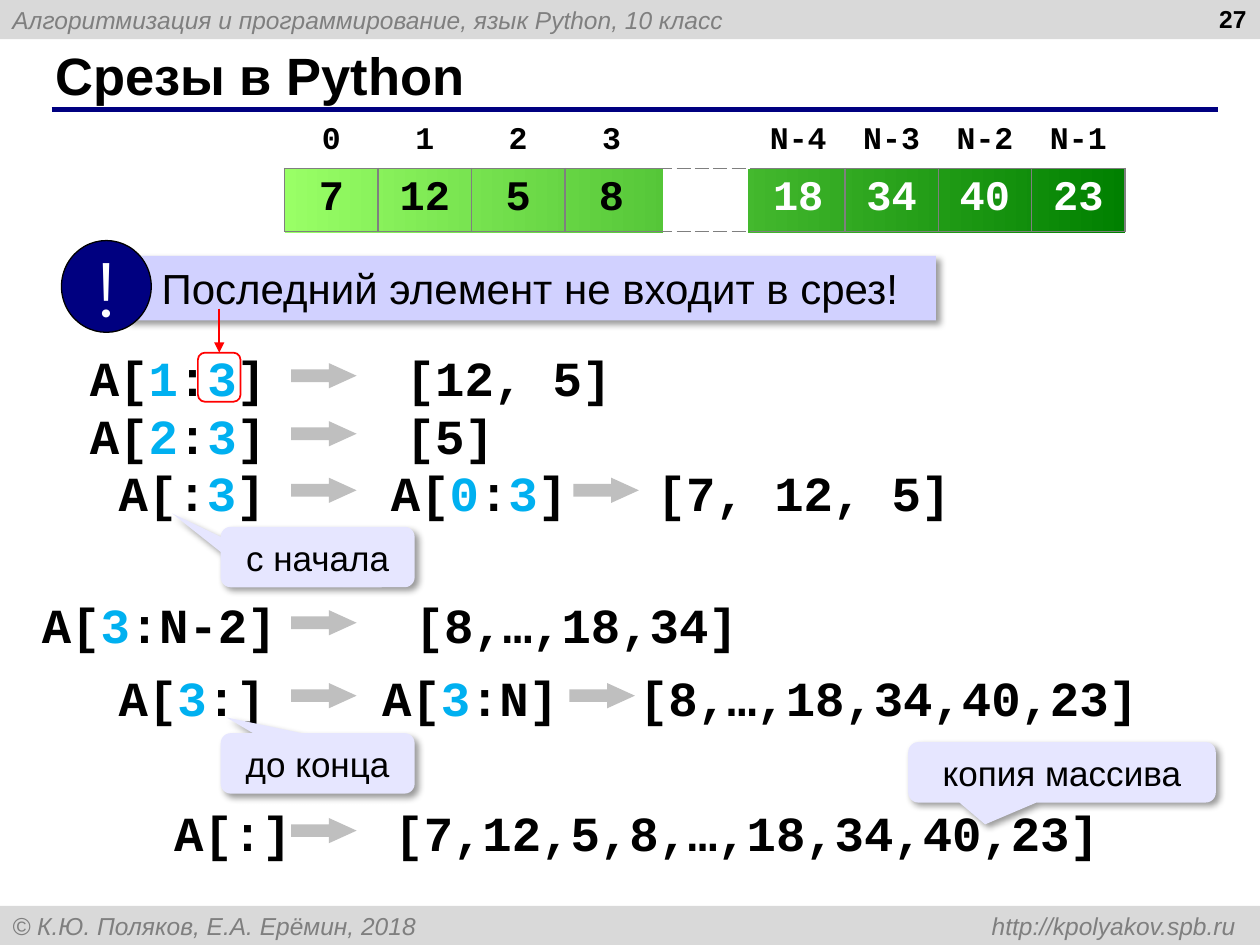
"""Build the slide on slices of a list in Python."""
import lxml.etree
import pptx
import pptx.dml.color
import pptx.enum.dml
import pptx.enum.shapes
import pptx.enum.text
import pptx.oxml.ns
import pptx.util

RGB = pptx.dml.color.RGBColor
KIND = pptx.enum.shapes.MSO_SHAPE
ALIGN = pptx.enum.text.PP_ALIGN
MIDDLE = pptx.enum.text.MSO_ANCHOR.MIDDLE
TOP = pptx.enum.text.MSO_ANCHOR.TOP

BLACK = RGB(0x00, 0x00, 0x00)
WHITE = RGB(0xFF, 0xFF, 0xFF)
NAVY = RGB(0x00, 0x00, 0x80)
RED = RGB(0xFF, 0x00, 0x00)
BLUE = RGB(0x00, 0xB0, 0xF0)
BAR = RGB(0xD9, 0xD9, 0xD9)
GREY = RGB(0x7F, 0x7F, 0x7F)
ARROW = RGB(0xBF, 0xBF, 0xBF)
LILAC = RGB(0xE6, 0xE6, 0xFF)
BANNER = RGB(0xD1, 0xD1, 0xFF)
LIME = RGB(0x99, 0xFF, 0x66)
GREEN = RGB(0x00, 0x80, 0x00)

SANS, MONO = "Arial", "Courier New"
CHAR = 0.593


def cms(*nums):
    """Turn numbers into lengths in centimetres."""
    return [pptx.util.Cm(num) for num in nums]


def node(base, tag, **attrs):
    """Add a drawing element below another one."""
    return lxml.etree.SubElement(base, pptx.oxml.ns.qn("a:" + tag), attrs)


def style(run, size, color=BLACK, face=SANS, bold=False, slant=False):
    """Format one run."""
    font = run.font
    font.size, font.name = pptx.util.Pt(size), face
    font.bold, font.italic = bold, slant
    font.color.rgb = color


def write(frame, text, size, align=ALIGN.LEFT, anchor=MIDDLE, **looks):
    """Put one formatted paragraph into a text frame."""
    frame.text = text
    frame.vertical_anchor = anchor
    para = frame.paragraphs[0]
    para.alignment = align
    for run in para.runs:
        style(run, size, **looks)
    return para


def shape(slide, kind, box, fill=None, line=None, width=1):
    """Draw a flat preset shape."""
    item = slide.shapes.add_shape(kind, *cms(*box))
    item.shadow.inherit = False
    if fill is None:
        item.fill.background()
    else:
        item.fill.solid()
        item.fill.fore_color.rgb = fill
    if line is None:
        item.line.fill.background()
    else:
        item.line.color.rgb = line
        item.line.width = pptx.util.Pt(width)
    item.text_frame.word_wrap = True
    return item


def shade(item):
    """Give a shape a soft shadow to the lower right."""
    list_ = item._element.spPr.find(pptx.oxml.ns.qn("a:effectLst"))
    glow = node(list_, "outerShdw", blurRad="50800", dist="38100",
                dir="2700000", algn="tl", rotWithShape="0")
    node(node(glow, "srgbClr", val="000000"), "alpha", val="40000")


def link(slide, ends, color, width):
    """Draw a straight line without a shadow."""
    item = slide.shapes.add_connector(
        pptx.enum.shapes.MSO_CONNECTOR.STRAIGHT, *cms(*ends))
    item.line.color.rgb = color
    item.line.width = pptx.util.Pt(width)
    node(item._element.spPr, "effectLst")
    return item


def strip(slide, box, text, tab=None):
    """Draw a grey bar with a caption and an optional right tab."""
    item = shape(slide, KIND.RECTANGLE, box, BAR)
    para = write(item.text_frame, text, 14, color=GREY, slant=True)
    if tab:
        stops = node(para._p.get_or_add_pPr(), "tabLst")
        node(stops, "tab", pos=str(pptx.util.Cm(tab)), algn="r")


def head(slide, box):
    """Place the title, its rule and the page number."""
    left, top, width, height = box
    link(slide, (left + 0.18, top + 1.37, left + 23.7, top + 1.37), NAVY, 3)
    title = slide.shapes.title
    title.left, title.top, title.width, title.height = cms(*box)
    title.text_frame.auto_size = pptx.enum.text.MSO_AUTO_SIZE.NONE
    write(title.text_frame, "Срезы в Python", 30, bold=True)
    page = slide.shapes.add_textbox(
        *cms(left + width - 4.67, top - 0.89, 5.92, height))
    write(page.text_frame, "27", 14, ALIGN.RIGHT, TOP, bold=True)


def edge(cell, sides, dash):
    """Draw the named borders of a cell and clear the others."""
    props = cell._tc.get_or_add_tcPr()
    for side in "LRTB":
        line = node(props, "ln" + side, w="12700")
        if side in sides:
            node(node(line, "solidFill"), "srgbClr", val=str(GREY))
            node(line, "prstDash", val=dash)
        else:
            node(line, "noFill")


def array(slide, box):
    """Draw the list as a table over a green gradient."""
    left, top, width, high = box
    marks = ["0", "1", "2", "3", "", "N-4", "N-3", "N-2", "N-1"]
    items = ["7", "12", "5", "8", "", "18", "34", "40", "23"]
    gap, step = items.index(""), width / len(items)
    band = shape(slide, KIND.RECTANGLE, (left, top + high, width, 1.3), LIME)
    band.fill.gradient()
    band.fill.gradient_angle = 0
    for stop, color in zip(band.fill.gradient_stops, (LIME, GREEN)):
        stop.color.rgb = color
    shape(slide, KIND.FLOWCHART_PROCESS,
          (left + gap * step + 0.09, top + high, 1.73, 1.3), WHITE)
    table = slide.shapes.add_table(
        2, len(items), *cms(left, top, width, 2 * high)).table
    table.first_row = table.horz_banding = False
    for row, texts in enumerate((marks, items)):
        table.rows[row].height = pptx.util.Cm(high)
        for col, text in enumerate(texts):
            table.columns[col].width = pptx.util.Cm(step)
            cell = table.cell(row, col)
            inner = {gap - 1: "LTB", gap: "TB", gap + 1: "RTB"}
            edge(cell, inner.get(col, "LRTB") if row else "B",
                 "sysDash" if col == gap else "solid")
            cell.fill.background()
            tint = WHITE if row and col > gap else BLACK
            write(cell.text_frame, text, 24 if row else 18, ALIGN.CENTER,
                  TOP, color=tint, face=MONO, bold=True)


def code(slide, left, top, text):
    """Write code in which every second part between bars is blue."""
    parts = text.split("|")
    width = len("".join(parts)) * CHAR + 0.51
    frame = slide.shapes.add_textbox(*cms(left, top, width, 1.45)).text_frame
    frame.word_wrap = False
    para = frame.paragraphs[0]
    for spot, part in enumerate(parts):
        run = para.add_run()
        run.text = part
        style(run, 28, BLUE if spot % 2 else BLACK, MONO, True)


def slices(slide, left, top):
    """Write the rows of slices with arrows between their steps."""
    rows = [
        (0, [(0.97, "A[|1|:|3|]"), (7.34, "[12, 5]")], [5.87]),
        (1.17, [(0.97, "A[|2|:|3|]"), (7.34, "[5]")], [5.87]),
        (2.31, [(1.55, "A[:|3|]"), (7.04, "A[|0|:|3|]"),
                (12.4, "[7, 12, 5]")], [5.87, 11.56]),
        (4.98, [(0, "A[|3|:N-2]"), (7.52, "[8,…,18,34]")], [5.87]),
        (6.45, [(1.55, "A[|3|:]"), (6.86, "A[|3|:N]"),
                (12.04, "[8,…,18,34,40,23]")], [5.87, 11.48]),
        (9.17, [(2.67, "A[:]"), (7.11, "[7,12,5,8,…,18,34,40,23]")], [5.87]),
    ]
    for down, texts, arrows in rows:
        for shift, text in texts:
            code(slide, left + shift + CHAR, top + down, text)
        for shift in arrows:
            item = shape(slide, KIND.RIGHT_ARROW,
                         (left + shift, top + down + 0.44, 1.32, 0.51), ARROW)
            item.adjustments[1] = 1.1


def note(slide, box, text, tip):
    """Draw a callout whose tip is given relative to its size."""
    item = shape(slide, KIND.ROUNDED_RECTANGULAR_CALLOUT, box, LILAC)
    item.adjustments[0], item.adjustments[1] = tip
    shade(item)
    write(item.text_frame, text, 20, ALIGN.CENTER)


def alert(slide, box):
    """Draw the warning banner, its badge and the pointer to the digit."""
    left, top, width, height = box
    item = shape(slide, KIND.RECTANGLE, box, BANNER)
    shade(item)
    item.text_frame.margin_left = pptx.util.Cm(0.72)
    write(item.text_frame, "Последний элемент не входит в срез!", 24)
    badge = shape(slide, KIND.OVAL, (left - 1.3, top - 0.31, 1.81, 1.85),
                  NAVY, BLACK, 0.75)
    badge.text_frame.word_wrap = False
    write(badge.text_frame, "!", 44, ALIGN.CENTER, color=WHITE,
          face="Montserrat")
    frame = shape(slide, KIND.ROUNDED_RECTANGLE,
                  (left + 1.45, top + 1.95, 0.86, 0.99), line=RED)
    mid = left + 1.88
    arrow = link(slide, (mid, top + 1.06, mid, top + 1.95), RED, 1)
    arrow.end_connect(frame, 0)
    node(arrow.line._get_or_add_ln(), "tailEnd", type="triangle")


def main():
    """Build and save the slide."""
    show = pptx.Presentation()
    show.slide_width, show.slide_height = cms(25.4, 19.05)
    slide = show.slides.add_slide(show.slide_layouts[5])
    strip(slide, (0, 0, 25.4, 0.79),
          "Алгоритмизация и программирование, язык Python, 10 класс")
    strip(slide, (0, 18.26, 25.4, 0.79),
          "© К.Ю. Поляков, Е.А. Ерёмин, 2018\thttp://kpolyakov.spb.ru", 24.66)
    head(slide, (0.86, 0.84, 23.27, 1.32))
    array(slide, (5.74, 2.36, 16.94, 1.04))
    slices(slide, 0, 6.88)
    note(slide, (4.45, 10.62, 3.91, 1.22), "с начала", (-0.75, -0.72))
    note(slide, (4.45, 14.78, 3.91, 1.22), "до конца", (-0.47, -0.76))
    note(slide, (18.31, 14.96, 6.2, 1.22), "копия массива", (-0.25, 0.86))
    alert(slide, (2.54, 5.16, 16.33, 1.3))
    show.save("out.pptx")


if __name__ == "__main__":
    main()
